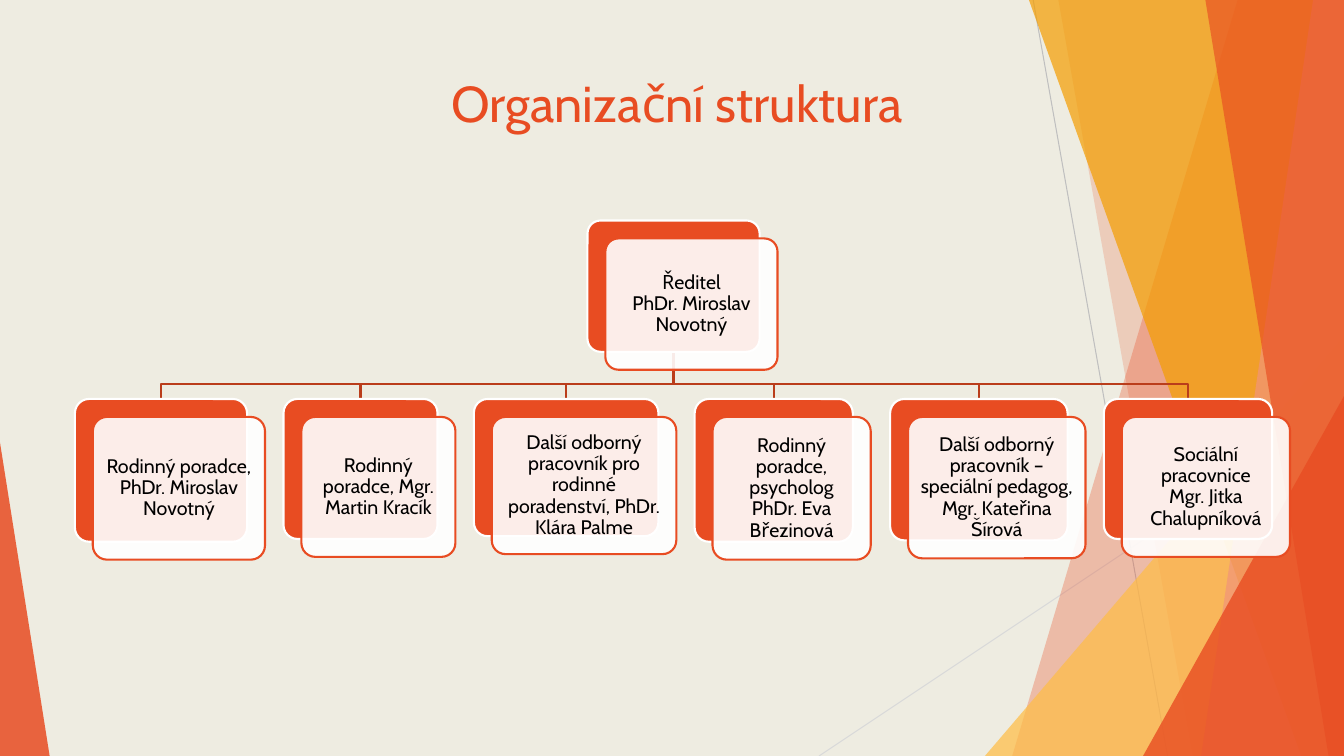
from dataclasses import dataclass

from lxml import etree
from pptx import Presentation
from pptx.dml.color import RGBColor
from pptx.enum.shapes import MSO_CONNECTOR, MSO_SHAPE
from pptx.enum.text import MSO_ANCHOR, PP_ALIGN
from pptx.oxml.ns import qn
from pptx.util import Pt

STRAIGHT = MSO_CONNECTOR.STRAIGHT
TRIANGLE = MSO_SHAPE.ISOSCELES_TRIANGLE
ROUNDED = MSO_SHAPE.ROUNDED_RECTANGLE
MIDDLE, TOP = MSO_ANCHOR.MIDDLE, MSO_ANCHOR.TOP
CENTER = PP_ALIGN.CENTER

SLIDE_W, SLIDE_H = 960, 540


@dataclass(frozen=True)
class Theme:
    background: str = "EEECE1"
    accent: str = "E84C22"
    branch: str = "BA3D1B"
    amber: str = "F49D00"
    yellow: str = "FFBD47"
    salmon: str = "F1947A"
    white: str = "FFFFFF"
    black: str = "000000"
    grey: str = "BFBFBF"
    light_grey: str = "D9D9D9"
    font: str = "Cabin"
    title_size: float = 36
    card_size: float = 14
    line_width: float = 1.5
    hairline: float = 0.75


THEME = Theme()


@dataclass(frozen=True)
class Band:
    """Facet from the top edge to the bottom edge, filled to the right side."""
    top_x: float
    bottom_x: float
    color: str
    opacity: int


@dataclass(frozen=True)
class Wedge:
    """Triangle standing on the bottom edge; apex runs from 0 left to 1 right."""
    left: float
    top: float
    width: float
    apex: float
    color: str
    opacity: int


@dataclass(frozen=True)
class Card:
    text: str
    left: float
    top: float
    width: float
    height: float

    @property
    def center_x(self) -> float:
        return self.left + self.width / 2


FACETS = [
    Band(884, 723, THEME.accent, 30),
    Band(756, 852, THEME.accent, 20),
    Wedge(703.5, 240, 256.5, 1, THEME.yellow, 72),
    Band(735, 929.5, THEME.amber, 70),
    Band(938, 858, THEME.salmon, 70),
    Band(861, 949, THEME.accent, 65),
    Wedge(816.5, 283, 143.5, 1, THEME.accent, 80),
    Wedge(0, 316, 35.5, 0, THEME.accent, 85),
]
RAYS = [
    (738, 0, 834, SLIDE_H, THEME.grey),
    (SLIDE_W, 290, 585, SLIDE_H, THEME.light_grey),
]

STAFF_TOP, BUS_Y, CARD_SHIFT = 285, 274.3, 12.8
DIRECTOR = Card("Ředitel\nPhDr. Miroslav Novotný", 419.6, 157.5, 123, 93.8)
STAFF = [
    Card(text, left, STAFF_TOP, width, height)
    for text, left, width, height in [
        ("Rodinný poradce,\nPhDr. Miroslav Novotný", 53.5, 123, 102),
        ("Rodinný poradce, Mgr. Martin Kracík", 202.5, 110, 100),
        ("Další odborný pracovník pro rodinné poradenství, PhDr. Klára Palme",
         338.5, 131.8, 98),
        ("Rodinný poradce, psycholog\nPhDr. Eva Březinová", 496.2, 113, 102),
        ("Další odborný pracovník – speciální pedagog, Mgr. Kateřina Šírová",
         635.8, 126.8, 101),
        ("Sociální pracovnice\nMgr. Jitka Chalupníková", 788.5, 120.2, 100),
    ]
]


def rgb(color: str) -> RGBColor:
    return RGBColor.from_string(color)


def paint(s, fill: str | None, line: str | None = None, opacity: int = 100) -> None:
    s.shadow.inherit = False
    if fill:
        s.fill.solid()
        s.fill.fore_color.rgb = rgb(fill)
    else:
        s.fill.background()
    if opacity < 100:
        tint = s.fill._xPr.find(qn("a:solidFill"))[0]
        etree.SubElement(tint, qn("a:alpha"), val=str(opacity * 1000))
    if line:
        s.line.color.rgb = rgb(line)
        s.line.width = Pt(THEME.line_width)
    else:
        s.line.fill.background()


def write(s, text: str, size: float, color: str, frame: dict, spacing: float = 1) -> None:
    tf = s.text_frame
    for name, value in {"word_wrap": True, **frame}.items():
        setattr(tf, name, value)
    p = tf.paragraphs[0]
    p.text = text
    p.alignment = CENTER
    p.line_spacing = spacing
    for r in p.runs:
        for name, value in {"name": THEME.font, "size": Pt(size)}.items():
            setattr(r.font, name, value)
        r.font.color.rgb = rgb(color)


def draw_path(shapes, points: list[tuple[float, float]], close: bool):
    start, *rest = [(Pt(x), Pt(y)) for x, y in points]
    builder = shapes.build_freeform(*start)
    builder.add_line_segments(rest, close=close)
    return builder.convert_to_shape()


def draw_ray(shapes, x1: float, y1: float, x2: float, y2: float, color: str) -> None:
    s = shapes.add_connector(STRAIGHT, Pt(x1), Pt(y1), Pt(x2), Pt(y2))
    s.line.color.rgb = rgb(color)
    s.line.width = Pt(THEME.hairline)
    etree.SubElement(s._element.spPr, qn("a:effectLst"))


def draw_facet(shapes, facet: Band | Wedge) -> None:
    if isinstance(facet, Band):
        s = draw_path(shapes, [(facet.top_x, 0), (SLIDE_W, 0), (SLIDE_W, SLIDE_H),
                               (facet.bottom_x, SLIDE_H)], close=True)
    else:
        s = shapes.add_shape(TRIANGLE, Pt(facet.left), Pt(facet.top),
                             Pt(facet.width), Pt(SLIDE_H - facet.top))
        s.adjustments[0] = facet.apex
    paint(s, facet.color, opacity=facet.opacity)


def draw_title(shapes, text: str) -> None:
    s = shapes.add_textbox(Pt(53.5), Pt(48), Pt(805), Pt(104))
    write(s, text, THEME.title_size, THEME.accent,
          {"vertical_anchor": TOP, "margin_left": Pt(62)})


def draw_branch(shapes, parent: Card, child: Card) -> None:
    s = draw_path(shapes, [(parent.center_x, parent.top + parent.height),
                           (parent.center_x, BUS_Y), (child.center_x, BUS_Y),
                           (child.center_x, child.top)], close=False)
    paint(s, None, THEME.branch)


def draw_card(shapes, card: Card) -> None:
    """Draw a solid back plate and a shifted translucent front with the text."""
    for shift, fill, line, opacity in [(0, THEME.accent, THEME.white, 100),
                                       (CARD_SHIFT, THEME.white, THEME.accent, 90)]:
        s = shapes.add_shape(ROUNDED, Pt(card.left + shift), Pt(card.top + shift),
                             Pt(card.width), Pt(card.height))
        s.adjustments[0] = 0.1
        paint(s, fill, line, opacity)
    sides = ("left", "top", "right", "bottom")
    write(s, card.text, THEME.card_size, THEME.black,
          {"vertical_anchor": MIDDLE, **{f"margin_{side}": Pt(4.2) for side in sides}},
          spacing=0.9)


def main() -> None:
    prs = Presentation()
    prs.slide_width, prs.slide_height = Pt(SLIDE_W), Pt(SLIDE_H)
    slide = prs.slides.add_slide(prs.slide_layouts[6])
    slide.background.fill.solid()
    slide.background.fill.fore_color.rgb = rgb(THEME.background)
    shapes = slide.shapes
    for ray in RAYS:
        draw_ray(shapes, *ray)
    for facet in FACETS:
        draw_facet(shapes, facet)
    draw_title(shapes, "Organizační struktura")
    for member in STAFF:
        draw_branch(shapes, DIRECTOR, member)
    for card in [DIRECTOR, *STAFF]:
        draw_card(shapes, card)
    prs.save("out.pptx")


if __name__ == "__main__":
    main()
